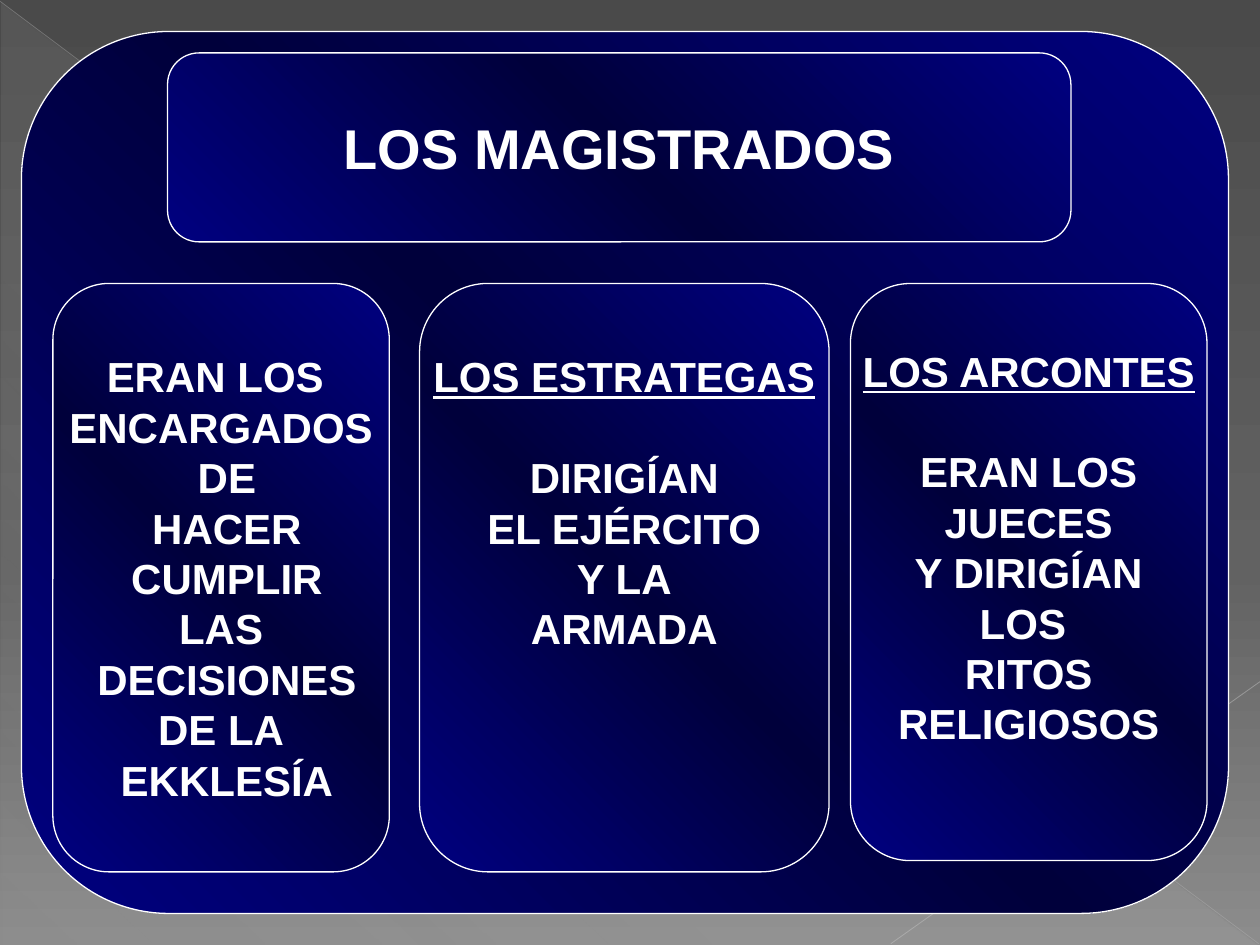
from lxml import etree
from pptx import Presentation
from pptx.dml.color import RGBColor
from pptx.enum.shapes import MSO_CONNECTOR, MSO_SHAPE
from pptx.enum.text import MSO_ANCHOR, PP_ALIGN
from pptx.oxml.ns import qn
from pptx.util import Inches, Pt

ROUNDED = MSO_SHAPE.ROUNDED_RECTANGLE
TRIANGLE = MSO_SHAPE.RIGHT_TRIANGLE
STRAIGHT = MSO_CONNECTOR.STRAIGHT
MIDDLE = MSO_ANCHOR.MIDDLE
CENTER = PP_ALIGN.CENTER

WHITE = RGBColor(0xFF, 0xFF, 0xFF)
NAVY = RGBColor(0x00, 0x00, 0x80)
MIDNIGHT = RGBColor(0x00, 0x00, 0x3B)
CHARCOAL = RGBColor(0x4A, 0x4A, 0x4A)
GRAPHITE = RGBColor(0x62, 0x62, 0x62)
ASH = RGBColor(0x8C, 0x8C, 0x8C)
MIST = RGBColor(0xD2, 0xD2, 0xD2)
SILVER = RGBColor(0xBF, 0xBF, 0xBF)
PEARL = RGBColor(0xC6, 0xC6, 0xC6)

BACKGROUND_STOPS = [(0, CHARCOAL, 100), (60, GRAPHITE, 100), (100, ASH, 100)]
SHEEN_STOPS = [(0, MIST, 10), (70, MIST, 8), (100, MIST, 1)]
PANEL_STOPS = [(0, NAVY, 100), (50, MIDNIGHT, 100), (100, NAVY, 100)]

COLUMN_TOP = 2.25
LINE_HEIGHT = 0.4
COLUMNS = [
    dict(left=0.42, width=2.67, height=4.67, lift=0, heading=None,
         lines=["ERAN LOS ", "ENCARGADOS", " DE", " HACER", " CUMPLIR",
                "LAS", " DECISIONES", "DE LA", " EKKLESÍA"]),
    dict(left=3.33, width=3.25, height=4.67, lift=3, heading="LOS ESTRATEGAS",
         lines=["DIRIGÍAN", "EL EJÉRCITO", "Y LA", "ARMADA"]),
    dict(left=6.75, width=2.83, height=4.58, lift=1, heading="LOS ARCONTES",
         lines=["ERAN LOS", "JUECES", "Y DIRIGÍAN", "LOS ", "RITOS",
                "RELIGIOSOS"]),
]


def set_alpha(color_element, percent):
    if percent < 100:
        alpha = etree.SubElement(color_element, qn("a:alpha"))
        alpha.set("val", str(percent * 1000))


def set_gradient(fill, element, stops, angle):
    fill.gradient()
    fill.gradient_angle = (360 - angle) % 360
    stop_list = element.find(".//" + qn("a:gsLst"))
    for stop in list(stop_list):
        stop_list.remove(stop)
    for position, color, opacity in stops:
        stop = etree.SubElement(stop_list, qn("a:gs"), pos=str(position * 1000))
        color_element = etree.SubElement(stop, qn("a:srgbClr"), val=str(color))
        set_alpha(color_element, opacity)


def write_text(paragraph, text, size=24, underline=False, gap=0):
    paragraph.alignment = CENTER
    paragraph.line_spacing = Pt(size * 1.2)
    paragraph.space_before = Inches(gap)
    run = paragraph.add_run()
    run.text = text
    run.font.name = "Arial"
    run.font.size = Pt(size)
    run.font.bold = True
    run.font.underline = underline
    run.font.color.rgb = WHITE


class SlideBuilder:
    def __init__(self, slide):
        self.slide = slide
        self.corner = 0.167
        self.border = Pt(0.75)

    def background(self):
        set_gradient(self.slide.background.fill, self.slide.element,
                     BACKGROUND_STOPS, 90)

    def shape(self, kind, left, top, width, height, stops, angle):
        shape = self.slide.shapes.add_shape(
            kind, Inches(left), Inches(top), Inches(width), Inches(height))
        shape.shadow.inherit = False
        set_gradient(shape.fill, shape.element, stops, angle)
        return shape

    def sheen(self):
        triangle = self.shape(TRIANGLE, 0.01, 0.02, 9.98, 7.48, SHEEN_STOPS, 133)
        triangle.line.fill.background()

    def line(self, start, end, color, width, opacity):
        connector = self.slide.shapes.add_connector(
            STRAIGHT, *(Inches(value) for value in start + end))
        connector.line.color.rgb = color
        connector.line.width = Pt(width)
        properties = connector.element.spPr
        set_alpha(properties.find(".//" + qn("a:srgbClr")), opacity)
        etree.SubElement(properties, qn("a:effectLst"))

    def panel(self, left, top, width, height):
        panel = self.shape(ROUNDED, left, top, width, height, PANEL_STOPS, 315)
        panel.adjustments[0] = self.corner
        panel.line.color.rgb = WHITE
        panel.line.width = self.border
        frame = panel.text_frame
        frame.word_wrap = False
        frame.vertical_anchor = MIDDLE
        return frame

    def title(self, text):
        frame = self.panel(1.33, 0.42, 7.17, 1.5)
        write_text(frame.paragraphs[0], text, size=32)

    def column(self, left, width, height, lift, heading, lines):
        frame = self.panel(left, COLUMN_TOP, width, height)
        frame.margin_bottom = Inches(0.05 + lift * LINE_HEIGHT)
        paragraph = frame.paragraphs[0]
        gap = 0
        if heading:
            write_text(paragraph, heading, underline=True)
            paragraph = frame.add_paragraph()
            gap = LINE_HEIGHT
        write_text(paragraph, lines[0], gap=gap)
        for line in lines[1:]:
            write_text(frame.add_paragraph(), line)


def main():
    presentation = Presentation()
    presentation.slide_width = Inches(10)
    presentation.slide_height = Inches(7.5)
    slide = presentation.slides.add_slide(presentation.slide_layouts[6])
    builder = SlideBuilder(slide)
    builder.background()
    builder.sheen()
    builder.line((0, 0.01), (9.99, 7.49), SILVER, 0.39, 35)
    builder.line((10, 5.41), (7.07, 7.49), PEARL, 0.47, 45)
    builder.panel(0.17, 0.25, 9.58, 7)
    builder.title("LOS MAGISTRADOS")
    for column in COLUMNS:
        builder.column(**column)
    presentation.save("out.pptx")


if __name__ == "__main__":
    main()
